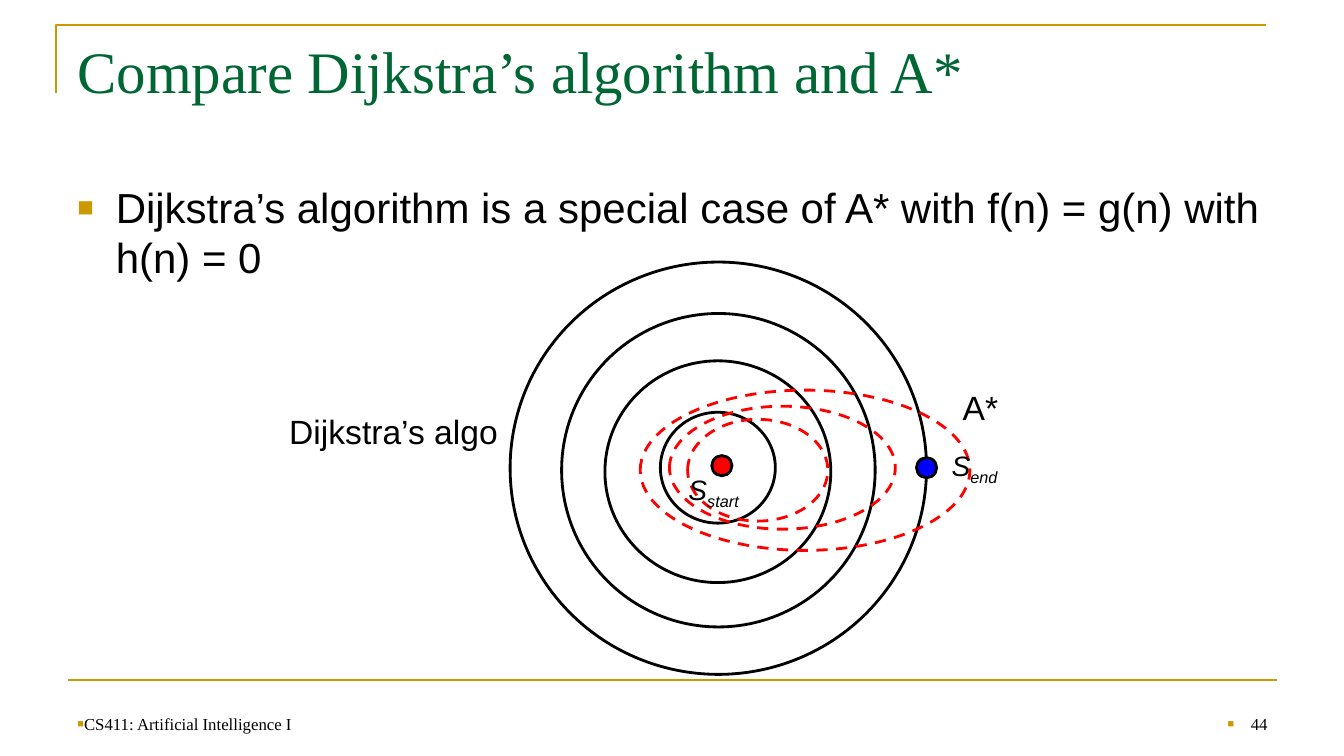
from dataclasses import dataclass

from lxml.etree import SubElement
from pptx import Presentation
from pptx.dml.color import RGBColor
from pptx.enum.dml import MSO_LINE
from pptx.enum.shapes import MSO_CONNECTOR, MSO_SHAPE
from pptx.enum.text import MSO_ANCHOR, MSO_AUTO_SIZE, PP_ALIGN
from pptx.oxml.ns import qn
from pptx.util import Inches, Pt

BLACK = RGBColor(0x00, 0x00, 0x00)
WHITE = RGBColor(0xFF, 0xFF, 0xFF)
GOLD = RGBColor(0xCC, 0x99, 0x00)
GREEN = RGBColor(0x00, 0x66, 0x33)
RED = RGBColor(0xFF, 0x00, 0x00)
BLUE = RGBColor(0x00, 0x00, 0xFF)
SANS, SERIF = "Arial", "Times New Roman"

Box = tuple[float, float, float, float]


@dataclass
class Oval:
    box: Box
    fill: RGBColor | None = WHITE
    line: RGBColor = BLACK
    dash: MSO_LINE | None = None


@dataclass
class Label:
    box: Box
    text: str
    size: int
    sub: str = ""
    font: str = SANS
    space: float = 0.2
    anchor: MSO_ANCHOR = MSO_ANCHOR.TOP
    align: PP_ALIGN = PP_ALIGN.LEFT
    hang: float | None = None


RINGS = [
    Oval((5.06, 2.6, 4.13, 4.09)),
    Oval((5.57, 3.11, 3.11, 3.11)),
    Oval((6, 3.58, 2.24, 2.2)),
    Oval((6.55, 4.09, 1.14, 1.1)),
]
NODES = [
    Oval((7.06, 4.52, 0.2, 0.2), RED),
    Oval((9.09, 4.54, 0.2, 0.2), BLUE),
]
SEARCH = [
    Oval(box, None, RED, MSO_LINE.DASH)
    for box in (
        (6.35, 3.87, 3.27, 1.59),
        (6.82, 4.16, 1.39, 1.01),
        (6.64, 4.03, 2.24, 1.22),
    )
]
LABELS = [
    Label((0.67, 1.75, 12, 4.95),
          "Dijkstra’s algorithm is a special case of A* with f(n) = g(n) with h(n) = 0",
          30, hang=0.38),
    Label((0.67, 6.83, 8.11, 0.5), "CS411: Artificial Intelligence I", 12,
          font=SERIF, space=0, anchor=MSO_ANCHOR.BOTTOM, hang=0),
    Label((9.56, 6.83, 3.11, 0.5), "44", 12, font=SERIF, space=0,
          anchor=MSO_ANCHOR.BOTTOM, align=PP_ALIGN.RIGHT, hang=0.23),
]
TAGS = [
    Label((9.34, 4.4, 0.79, 0.44), "S", 20, "end"),
    Label((6.73, 4.64, 0.79, 0.44), "S", 20, "start"),
    Label((2.77, 4.03, 2.48, 0.5), "Dijkstra’s algo", 24),
    Label((9.45, 3.79, 0.68, 0.5), "A*", 24),
]


def style(target, values: dict) -> None:
    for name, value in values.items():
        setattr(target, name, value)


def place(box: Box) -> list[int]:
    return [Inches(side) for side in box]


def add_bullet(para, hang: float) -> None:
    props = para._p.get_or_add_pPr()
    props.set("marL", str(Inches(hang)))
    props.set("indent", str(-Inches(hang)))
    color = SubElement(props, qn("a:buClr"))
    SubElement(color, qn("a:srgbClr"), val=str(GOLD))
    SubElement(props, qn("a:buSzPct"), val="65000")
    SubElement(props, qn("a:buFont"), typeface=SANS)
    SubElement(props, qn("a:buChar"), char="■")


def add_label(shapes, label: Label) -> None:
    frame = shapes.add_textbox(*place(label.box)).text_frame
    style(frame, {"word_wrap": True, "vertical_anchor": label.anchor})
    para = frame.paragraphs[0]
    style(para, {"alignment": label.align,
                 "space_before": Pt(label.size * label.space)})
    if label.hang is not None:
        add_bullet(para, label.hang)
    for text in filter(None, (label.text, label.sub)):
        run = para.add_run()
        run.text = text
        style(run.font, {"name": label.font, "size": Pt(label.size),
                         "italic": bool(label.sub)})
        run.font.color.rgb = BLACK
    if label.sub:
        run.font._element.set("baseline", "-25000")


def add_oval(shapes, oval: Oval) -> None:
    shape = shapes.add_shape(MSO_SHAPE.OVAL, *place(oval.box))
    shape.shadow.inherit = False
    if oval.fill is None:
        shape.fill.background()
    else:
        shape.fill.solid()
        shape.fill.fore_color.rgb = oval.fill
    style(shape.line, {"width": Pt(2), "dash_style": oval.dash})
    shape.line.color.rgb = oval.line


def add_frame(shapes) -> None:
    """Draw the gold corner at the top and the rule above the footer."""
    pen = shapes.build_freeform(Inches(0.56), Inches(0.92))
    pen.add_line_segments(
        [(Inches(0.56), Inches(0.25)), (Inches(12.56), Inches(0.25))], close=False)
    corner = pen.convert_to_shape()
    corner.shadow.inherit = False
    corner.fill.background()
    rule = shapes.add_connector(
        MSO_CONNECTOR.STRAIGHT, *place((0.67, 6.75, 12.67, 6.75)))
    SubElement(rule._element.spPr, qn("a:effectLst"))
    for part in (corner, rule):
        part.line.color.rgb = GOLD
        part.line.width = Pt(1.5)


def set_title(title) -> None:
    left, top, width, height = place((0.67, 0.29, 12, 1.25))
    style(title, {"left": left, "top": top, "width": width, "height": height})
    frame = title.text_frame
    frame.text = "Compare Dijkstra’s algorithm and A*"
    style(frame, {"word_wrap": True, "vertical_anchor": MSO_ANCHOR.TOP,
                  "auto_size": MSO_AUTO_SIZE.NONE})
    para = frame.paragraphs[0]
    para.alignment = PP_ALIGN.LEFT
    font = para.runs[0].font
    style(font, {"name": SERIF, "size": Pt(42)})
    font.color.rgb = GREEN


def main() -> None:
    deck = Presentation()
    style(deck, {"slide_width": Inches(13.33), "slide_height": Inches(7.5)})
    slide = deck.slides.add_slide(deck.slide_layouts[5])
    shapes = slide.shapes
    set_title(shapes.title)
    add_frame(shapes)
    for label in LABELS:
        add_label(shapes, label)
    for oval in RINGS + NODES + SEARCH:
        add_oval(shapes, oval)
    for tag in TAGS:
        add_label(shapes, tag)
    deck.save("out.pptx")


if __name__ == "__main__":
    main()
